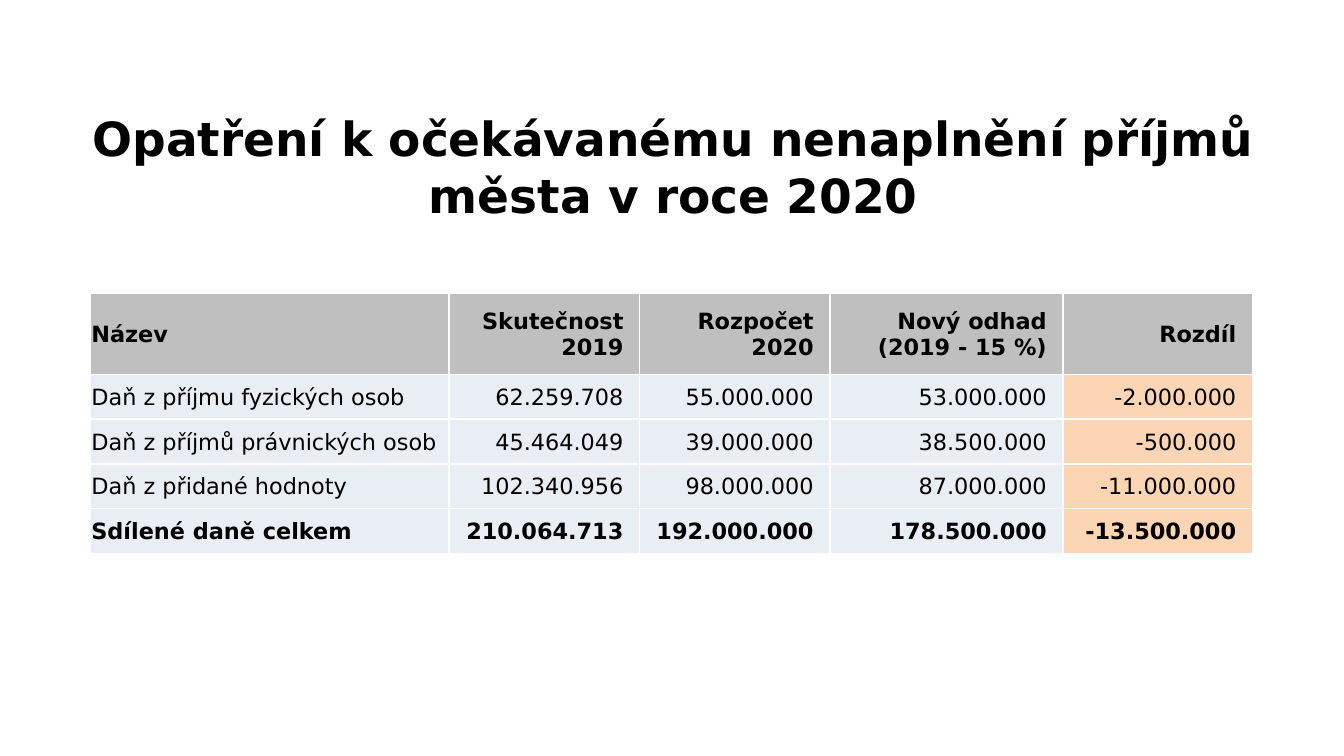
from typing import NamedTuple

from lxml.etree import SubElement
from pptx import Presentation
from pptx.dml.color import RGBColor
from pptx.enum.text import MSO_ANCHOR as Anchor, PP_ALIGN as Align
from pptx.oxml.ns import qn
from pptx.util import Inches, Pt

SLIDE_WIDTH = Inches(10)
SLIDE_HEIGHT = SLIDE_WIDTH * 9 // 16
FONT = "DejaVu Sans"
BLACK = RGBColor(0x00, 0x00, 0x00)
WHITE = RGBColor(0xFF, 0xFF, 0xFF)
HEADER_GREY = RGBColor(0xBF, 0xBF, 0xBF)
BODY_BLUE = RGBColor(0xE9, 0xED, 0xF4)
DIFFERENCE_ORANGE = RGBColor(0xFC, 0xD5, 0xB5)

TITLE = "Opatření k očekávanému nenaplnění příjmů města v roce 2020"
COLUMN_SHARES = (26.7, 14.2, 14.15, 17.35, 14.1)


class TableRow(NamedTuple):
    texts: tuple[str, ...]
    height: float = 5.92
    bold: bool = False
    fill: RGBColor = BODY_BLUE
    last_fill: RGBColor = DIFFERENCE_ORANGE


ROWS = (
    TableRow(
        ("Název", "Skutečnost 2019", "Rozpočet 2020", "Nový odhad\n(2019 - 15 %)", "Rozdíl"),
        height=10.75, bold=True, fill=HEADER_GREY, last_fill=HEADER_GREY,
    ),
    TableRow(("Daň z příjmu fyzických osob", "62.259.708", "55.000.000", "53.000.000", "-2.000.000")),
    TableRow(("Daň z příjmů právnických osob", "45.464.049", "39.000.000", "38.500.000", "-500.000")),
    TableRow(("Daň z přidané hodnoty", "102.340.956", "98.000.000", "87.000.000", "-11.000.000")),
    TableRow(
        ("Sdílené daně celkem", "210.064.713", "192.000.000", "178.500.000", "-13.500.000"),
        bold=True,
    ),
)


def across(percent: float) -> int:
    """Length as a percentage of the slide width."""
    return round(SLIDE_WIDTH * percent / 100)


def down(percent: float) -> int:
    """Length as a percentage of the slide height."""
    return round(SLIDE_HEIGHT * percent / 100)


def write_text(frame, text: str, size: float, bold: bool, align: Align) -> None:
    for index, line in enumerate(text.split("\n")):
        para = frame.add_paragraph() if index else frame.paragraphs[0]
        para.alignment = align
        span = para.add_run()
        span.text = line
        span.font.name = FONT
        span.font.size = Pt(size)
        span.font.bold = bold
        span.font.color.rgb = BLACK


def add_borders(cell, color: RGBColor, width: int) -> None:
    properties = cell._tc.get_or_add_tcPr()
    for side in ("a:lnL", "a:lnR", "a:lnT", "a:lnB"):
        line = SubElement(properties, qn(side), w=str(width))
        fill = SubElement(line, qn("a:solidFill"))
        SubElement(fill, qn("a:srgbClr"), val=str(color))


def fill_cell(cell, text: str, bold: bool, fill: RGBColor, is_name: bool) -> None:
    cell.vertical_anchor = Anchor.MIDDLE
    cell.margin_left = cell.margin_top = Inches(0.01)
    cell.margin_right = Inches(0.01 if is_name else 0.12)
    cell.margin_bottom = 0
    add_borders(cell, WHITE, Pt(1))
    cell.fill.solid()
    cell.fill.fore_color.rgb = fill
    write_text(cell.text_frame, text, 12, bold, Align.LEFT if is_name else Align.RIGHT)


def add_title(page) -> None:
    title = page.shapes.title
    title.left, title.top = across(5.1), down(15)
    title.width, title.height = across(90), down(14)
    title.text_frame.word_wrap = True
    title.text_frame.vertical_anchor = Anchor.MIDDLE
    write_text(title.text_frame, TITLE, 25.2, True, Align.CENTER)


def add_tax_table(page) -> None:
    table = page.shapes.add_table(
        len(ROWS), len(COLUMN_SHARES), across(6.7), down(38.8),
        across(sum(COLUMN_SHARES)), down(sum(row.height for row in ROWS)),
    ).table
    for column, share in zip(table.columns, COLUMN_SHARES):
        column.width = across(share)
    last = len(COLUMN_SHARES) - 1
    for row_index, row in enumerate(ROWS):
        table.rows[row_index].height = down(row.height)
        for column_index, text in enumerate(row.texts):
            fill = row.last_fill if column_index == last else row.fill
            fill_cell(table.cell(row_index, column_index), text, row.bold, fill, column_index == 0)


def main() -> None:
    deck = Presentation()
    deck.slide_width, deck.slide_height = SLIDE_WIDTH, SLIDE_HEIGHT
    page = deck.slides.add_slide(deck.slide_layouts.get_by_name("Title Only"))
    add_title(page)
    add_tax_table(page)
    deck.save("out.pptx")


if __name__ == "__main__":
    main()
